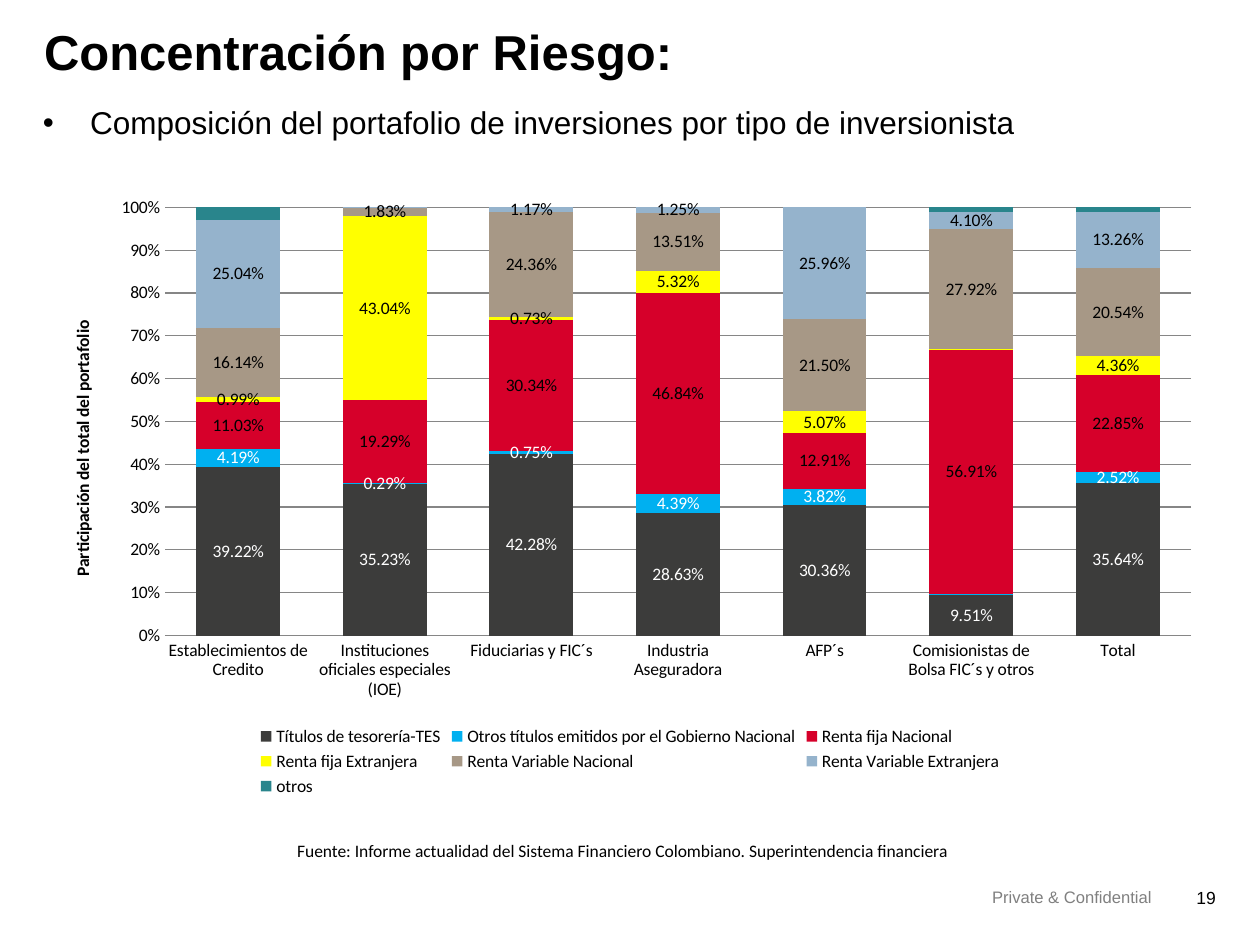
from dataclasses import dataclass

from lxml import etree
from pptx import Presentation
from pptx import util as u
from pptx.chart.data import CategoryChartData
from pptx.dml.color import RGBColor
from pptx.enum import chart as charts
from pptx.enum import text
from pptx.oxml import parse_xml
from pptx.oxml.ns import nsdecls, qn

WIDTH, HEIGHT = u.Inches(10), u.Inches(7.5)
BLACK, WHITE, GREY, GRID = "000000", "FFFFFF", "808080", "868686"


@dataclass
class Region:
    """Left, top, width and height in percent of the slide."""
    left: float
    top: float
    width: float
    height: float

    def emu(self) -> tuple:
        return (int(WIDTH * self.left / 100), int(HEIGHT * self.top / 100),
                int(WIDTH * self.width / 100), int(HEIGHT * self.height / 100))


@dataclass
class Style:
    size: float
    font: str = "Arial"
    color: str = BLACK
    bold: bool = False
    align: text.PP_ALIGN = text.PP_ALIGN.LEFT
    spacing: float = 1.0


@dataclass
class Investment:
    name: str
    color: str
    values: tuple
    label_color: str | None = BLACK
    hidden_label: int | None = None


CATEGORIES = ["Establecimientos de Credito", "Instituciones oficiales especiales (IOE)",
              "Fiduciarias y FIC´s", "Industria Aseguradora", "AFP´s",
              "Comisionistas de Bolsa FIC´s y otros", "Total"]

# Shares of each portfolio, in percent
INVESTMENTS = [
    Investment("Títulos de tesorería-TES", "3C3C3B",
               (39.22, 35.23, 42.28, 28.63, 30.36, 9.51, 35.64), WHITE),
    Investment("Otros títulos emitidos por el Gobierno Nacional", "00B0F0",
               (4.19, 0.29, 0.75, 4.39, 3.82, 0.21, 2.52), WHITE, 5),
    Investment("Renta fija Nacional", "D6002A",
               (11.03, 19.29, 30.34, 46.84, 12.91, 56.91, 22.85)),
    Investment("Renta fija Extranjera", "FFFF00",
               (0.99, 43.04, 0.73, 5.32, 5.07, 0.09, 4.36), hidden_label=5),
    Investment("Renta Variable Nacional", "A79886",
               (16.14, 1.83, 24.36, 13.51, 21.5, 27.92, 20.54)),
    Investment("Renta Variable Extranjera", "95B3CC",
               (25.04, 0.15, 1.17, 1.25, 25.96, 4.1, 13.26), hidden_label=1),
    Investment("otros", "29858C", (3, 0, 0, 0, 0, 1, 1), None),
]


def rgb(color: str) -> RGBColor:
    return RGBColor.from_string(color)


def set_font(font, style: Style) -> None:
    font.size, font.name, font.bold = u.Pt(style.size), style.font, style.bold
    font.color.rgb = rgb(style.color)


def write(box, region: Region, words: str, style: Style, inset=(0, 0), wrap=True) -> None:
    box.left, box.top, box.width, box.height = region.emu()
    frame = box.text_frame
    frame.text = words
    frame.word_wrap = wrap
    frame.auto_size = text.MSO_AUTO_SIZE.NONE
    frame.vertical_anchor = text.MSO_ANCHOR.TOP
    frame.margin_left = frame.margin_right = u.Inches(inset[0])
    frame.margin_top = frame.margin_bottom = u.Inches(inset[1])
    para = frame.paragraphs[0]
    para.alignment, para.line_spacing, para.space_before = style.align, style.spacing, u.Pt(0)
    set_font(para.runs[0].font, style)


def remove_bullet(para) -> None:
    properties = para._p.get_or_add_pPr()
    properties.set("marL", "0")
    properties.set("indent", "0")
    etree.SubElement(properties, qn("a:buNone"))


def set_layout(element, position: int, region: Region, inner: bool = False) -> None:
    """Place a plot area or legend, in percent of the chart."""
    for old in element.findall(qn("c:layout")):
        element.remove(old)
    target = '<c:layoutTarget val="inner"/>' if inner else ""
    modes = "".join(f'<c:{side}Mode val="edge"/>' for side in "xy")
    sizes = zip("xywh", (region.left, region.top, region.width, region.height))
    places = "".join(f'<c:{key} val="{share / 100}"/>' for key, share in sizes)
    element.insert(position, parse_xml(
        f'<c:layout {nsdecls("c")}><c:manualLayout>{target}{modes}{places}'
        '</c:manualLayout></c:layout>'))


def format_series(series, investment: Investment) -> None:
    series.format.fill.solid()
    series.format.fill.fore_color.rgb = rgb(investment.color)
    if investment.label_color is None:
        return
    labels = series.data_labels
    labels.show_value = True
    labels.number_format, labels.number_format_is_linked = "0.00%", False
    set_font(labels.font, Style(10, "Calibri", investment.label_color))
    if investment.hidden_label is not None:
        labels._element.insert(0, parse_xml(
            f'<c:dLbl {nsdecls("c")}><c:idx val="{investment.hidden_label}"/>'
            '<c:delete val="1"/></c:dLbl>'))


def add_portfolio_chart(page, region: Region) -> None:
    data = CategoryChartData(number_format="0.00%")
    data.categories = CATEGORIES
    for investment in INVESTMENTS:
        data.add_series(investment.name, [round(v / 100, 4) for v in investment.values])
    chart = page.shapes.add_chart(
        charts.XL_CHART_TYPE.COLUMN_STACKED_100, *region.emu(), data).chart
    set_font(chart.font, Style(10, "Calibri"))
    chart.has_title = False

    # Columns
    plot = chart.plots[0]
    plot.gap_width, plot.overlap, plot.vary_by_categories = 75, 100, False
    for series, investment in zip(plot.series, INVESTMENTS):
        format_series(series, investment)

    # Axes
    shares, investors = chart.value_axis, chart.category_axis
    for axis in (shares, investors):
        axis.major_tick_mark = axis.minor_tick_mark = charts.XL_TICK_MARK.NONE
    shares.minimum_scale, shares.maximum_scale, shares.major_unit = 0, 1, 0.1
    shares.tick_labels.number_format = "0%"
    shares.tick_labels.number_format_is_linked = False
    shares.format.line.fill.background()
    shares.has_major_gridlines = True
    for line in (shares.major_gridlines.format.line, investors.format.line):
        line.color.rgb, line.width = rgb(GRID), u.Pt(0.75)
    title = shares.axis_title.text_frame
    title.text = "Participación del total del portafolio"
    set_font(title.paragraphs[0].runs[0].font, Style(10, "Calibri", bold=True))

    # Legend and plot area
    chart.has_legend = True
    chart.legend.position = charts.XL_LEGEND_POSITION.BOTTOM
    chart.legend.include_in_layout = False
    set_layout(chart.legend._element, 1, Region(18, 87, 64, 13))
    plot_area = chart._chartSpace.find(f".//{qn('c:plotArea')}")
    set_layout(plot_area, 0, Region(10.3, 3.6, 87.6, 69.5), inner=True)


def main() -> None:
    deck = Presentation()
    deck.slide_width, deck.slide_height = WIDTH, HEIGHT
    page = deck.slides.add_slide(deck.slide_layouts[1])

    # Headings
    write(page.shapes.title, Region(3.5, 3.2, 88.8, 11.6), "Concentración por Riesgo:",
          Style(28, bold=True, spacing=0.85))
    subtitle = page.placeholders[1]
    remove_bullet(subtitle.text_frame.paragraphs[0])
    write(subtitle, Region(3.4, 10.93, 88.8, 6.4),
          "Composición del portafolio de inversiones por tipo de inversionista", Style(18))

    add_portfolio_chart(page, Region(3.5, 19.6, 93, 65.2))

    # Source and footer
    right = text.PP_ALIGN.RIGHT
    source, notice, number = (page.shapes.add_textbox(0, 0, 0, 0) for _ in range(3))
    write(source, Region(22.6, 88.27, 54.7, 3.6),
          "Fuente: Informe actualidad del Sistema Financiero Colombiano. "
          "Superintendencia financiera", Style(10, "Calibri"), (0.1, 0.05), wrap=False)
    write(notice, Region(59.4, 93.87, 32, 3.2), "Private & Confidential",
          Style(9.5, color=GREY, align=right))
    write(number, Region(94.2, 93.87, 2.3, 3.73), "19", Style(10, align=right))

    deck.save("out.pptx")


if __name__ == "__main__":
    main()
